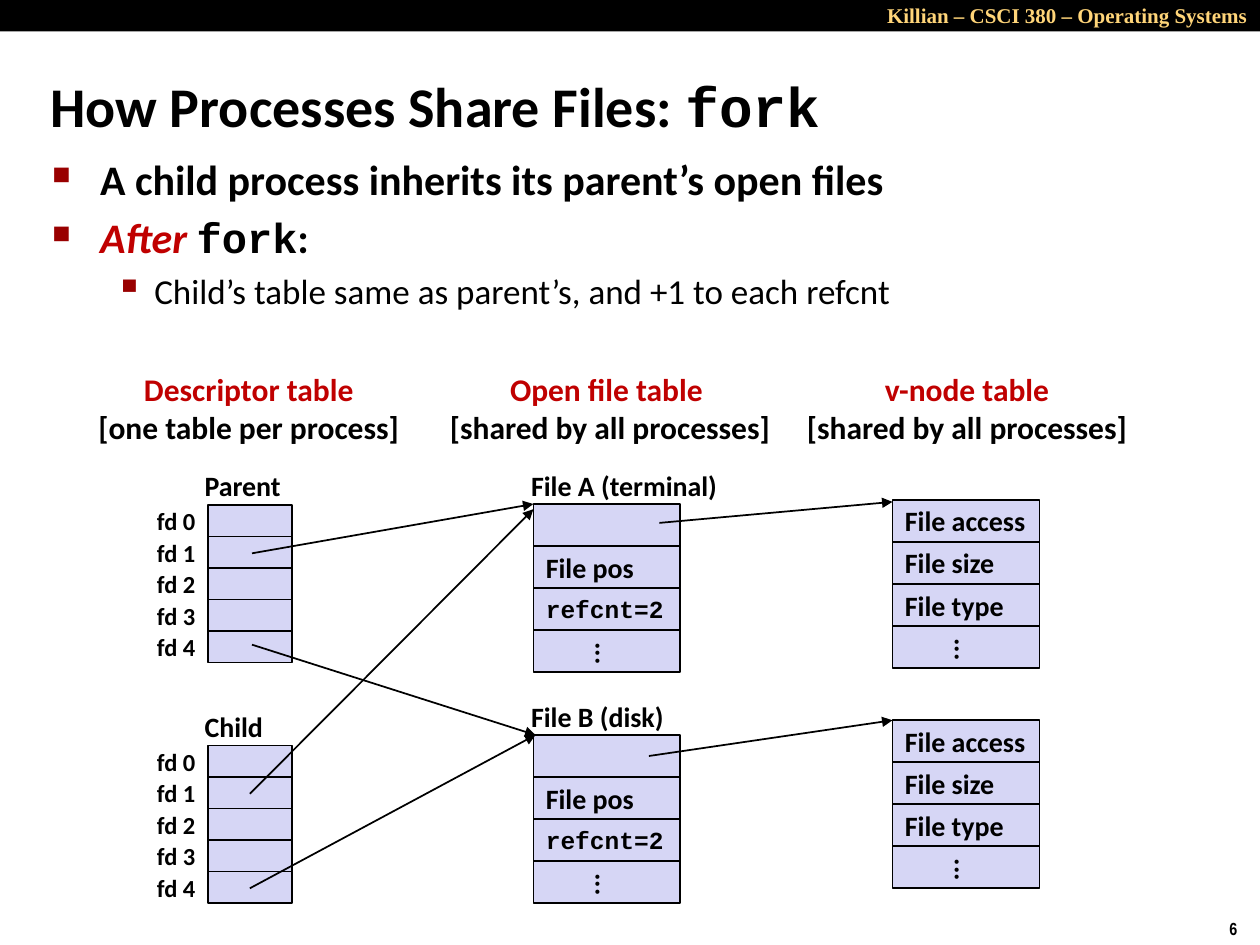
from lxml import etree
from pptx import Presentation
from pptx.dml.color import RGBColor
from pptx.enum import shapes, text
from pptx.oxml import ns
from pptx import util as u

# The slide is a grid of 120 columns by 90 rows
WIDE, HIGH = u.Inches(10), u.Inches(7.5)
COL, ROW = WIDE / 120, HIGH / 90
HUES = {"ink": "000000", "cell": "D6D6F5", "red": "C00000",
        "mark": "990000", "gold": "FFD579"}
SANS, MONO = "Calibri", "Courier New"
LEFT, MID, RIGHT = (text.PP_ALIGN.LEFT, text.PP_ALIGN.CENTER,
                    text.PP_ALIGN.RIGHT)


def hue(name):
    return RGBColor.from_string(HUES[name])


def place(box):
    x, y, w, h = box
    return [int(n) for n in (x * COL, y * ROW, w * COL, h * ROW)]


def style(font, size, face=SANS, tint="ink", bold=True):
    font.size, font.name, font.bold = u.Pt(size), face, bold
    font.color.rgb = hue(tint)


def write(para, words, size, face=SANS, tint="ink", bold=True, align=LEFT):
    para.alignment = align
    para.add_run().text = words
    style(para.font, size, face, tint, bold)


def frame(slide, box, wrap=False, anchor=text.MSO_ANCHOR.MIDDLE):
    body = slide.shapes.add_textbox(*place(box)).text_frame
    body.word_wrap, body.vertical_anchor = wrap, anchor
    return body


def label(slide, box, words, size, **look):
    write(frame(slide, box).paragraphs[0], words, size, **look)


def rect(slide, box, fill, edge=None):
    shape = slide.shapes.add_shape(shapes.MSO_SHAPE.RECTANGLE, *place(box))
    shape.shadow.inherit = False
    shape.fill.solid()
    shape.fill.fore_color.rgb = hue(fill)
    if edge:
        shape.line.color.rgb, shape.line.width = hue(edge), u.Pt(1)
    else:
        shape.line.fill.background()
    return shape


def cell(slide, box, words):
    body = rect(slide, box, "cell", "ink").text_frame
    body.word_wrap, body.vertical_anchor = False, text.MSO_ANCHOR.MIDDLE
    if words == "...":
        body._txBody.bodyPr.set("vert", "eaVert")
    if words:
        code = words.startswith("refcnt")
        write(body.paragraphs[0], words, 14 if code else 16,
              MONO if code else SANS)


def stack(slide, box, rows):
    x, y, w, h = box
    step = h / len(rows)
    for i, words in enumerate(rows):
        cell(slide, (x, y + i * step, w, step), words)


def fds(slide, box, name, gap):
    """Descriptor table with its name above and numbers at the left."""
    x, y, w, h = box
    step = h / 5
    stack(slide, box, [""] * 5)
    for i in range(5):
        label(slide, (x - w, y + i * step, w, step), f"fd {i}", 14,
              align=RIGHT)
    label(slide, (x - 1.5, y - gap, 11, 4.4), name, 16)


def files(slide, box, name):
    """Open file entry with its name above."""
    x, y, w, h = box
    stack(slide, box, ["", "File pos", "refcnt=2", "..."])
    label(slide, (x - 1.4, y - 4, 22, 4.4), name, 16)


def nodes(slide, box):
    stack(slide, box, ["File access", "File size", "File type", "..."])


def head(slide, box, name, note):
    body = frame(slide, box)
    write(body.paragraphs[0], name, 18, tint="red", align=MID)
    write(body.add_paragraph(), note, 18, align=MID)


def arrow(slide, x1, y1, x2, y2):
    ends = [int(n) for n in (x1 * COL, y1 * ROW, x2 * COL, y2 * ROW)]
    link = slide.shapes.add_connector(shapes.MSO_CONNECTOR.STRAIGHT, *ends)
    link.line.color.rgb, link.line.width = hue("ink"), u.Pt(1)
    tip = etree.SubElement(link.line._get_or_add_ln(), ns.qn("a:tailEnd"))
    tip.set("type", "triangle")
    etree.SubElement(link._element.spPr, ns.qn("a:effectLst"))


def bullet(para, sign, share, indent, hang, before):
    para.space_before = u.Pt(before)
    props = para._p.get_or_add_pPr()
    props.set("marL", str(u.Inches(indent)))
    props.set("indent", str(-u.Inches(hang)))
    tint = etree.SubElement(props, ns.qn("a:buClr"))
    etree.SubElement(tint, ns.qn("a:srgbClr")).set("val", HUES["mark"])
    size = etree.SubElement(props, ns.qn("a:buSzPct"))
    size.set("val", str(share * 1000))
    etree.SubElement(props, ns.qn("a:buChar")).set("char", sign)


def banner(slide, box):
    x, y, w, h = box
    rect(slide, box, "ink")
    label(slide, (x + w * 0.66, y - 0.4, w * 0.34, h * 1.2),
          "Killian – CSCI 380 – Operating Systems", 12,
          face="Times New Roman", tint="gold", align=RIGHT)


def title(slide, box):
    para = frame(slide, box, wrap=True).paragraphs[0]
    for words, face in (("How Processes Share Files: ", SANS),
                        ("fork", MONO)):
        run = para.add_run()
        run.text = words
        style(run.font, 32, face)


def points(slide, box):
    body = frame(slide, box, wrap=True, anchor=text.MSO_ANCHOR.TOP)
    first, after, sub = (body.paragraphs[0], body.add_paragraph(),
                         body.add_paragraph())
    for para in (first, after):
        bullet(para, "■", 60, 0.38, 0.38, 4.8)
    write(first, "A child process inherits its parent’s open files", 24)
    for words, face, tint in (("After ", SANS, "red"), ("fork", MONO, "ink"),
                              (":", SANS, "ink")):
        run = after.add_run()
        run.text = words
        style(run.font, 24, face, tint)
        run.font.italic = tint == "red"
    sub.level = 1
    bullet(sub, "▪", 110, 0.81, 0.31, 4)
    write(sub, "Child’s table same as parent’s, and +1 to each refcnt", 20,
          bold=False)


def diagram(slide):
    fd, op, vn = 19.8, 50.8, 85
    # Column headings
    shared = "[shared by all processes]"
    head(slide, (8, 34.6, 31.4, 8.5), "Descriptor table",
         "[one table per process]")
    head(slide, (41.5, 34.6, 33.2, 8.5), "Open file table ", shared)
    head(slide, (75.5, 34.6, 33.2, 8.5), "v-node table", shared)
    # Tables
    fds(slide, (fd, 48.1, 8, 15), "Parent", 4.1)
    fds(slide, (fd, 71, 8, 15), "Child", 4)
    files(slide, (op, 48, 14, 16), "File A (terminal)")
    files(slide, (op, 70, 14, 16), "File B (disk)")
    for y in (47.6, 68.6):
        nodes(slide, (vn, y, 14, 16))
    # Arrows from descriptors to files, and from files to v-nodes
    for ends in ((24, 52.7, op, 48), (24, 61.4, 51, 70),
                 (23.8, 75.6, op, 48.5), (23.8, 84.6, 51, 70),
                 (62.8, 49.8, vn, 47.8), (61.8, 72, vn, 68.6)):
        arrow(slide, *ends)


def main():
    deck = Presentation()
    deck.slide_width, deck.slide_height = WIDE, HIGH
    slide = deck.slides.add_slide(deck.slide_layouts[6])
    banner(slide, (0, 0, 120, 3))
    title(slide, (3.6, 5, 99.6, 10))
    points(slide, (3.8, 14, 109, 17))
    diagram(slide)
    label(slide, (115.9, 86.8, 4.1, 3.2), "6", 10, face="Arial Narrow")
    deck.save("out.pptx")


if __name__ == "__main__":
    main()
